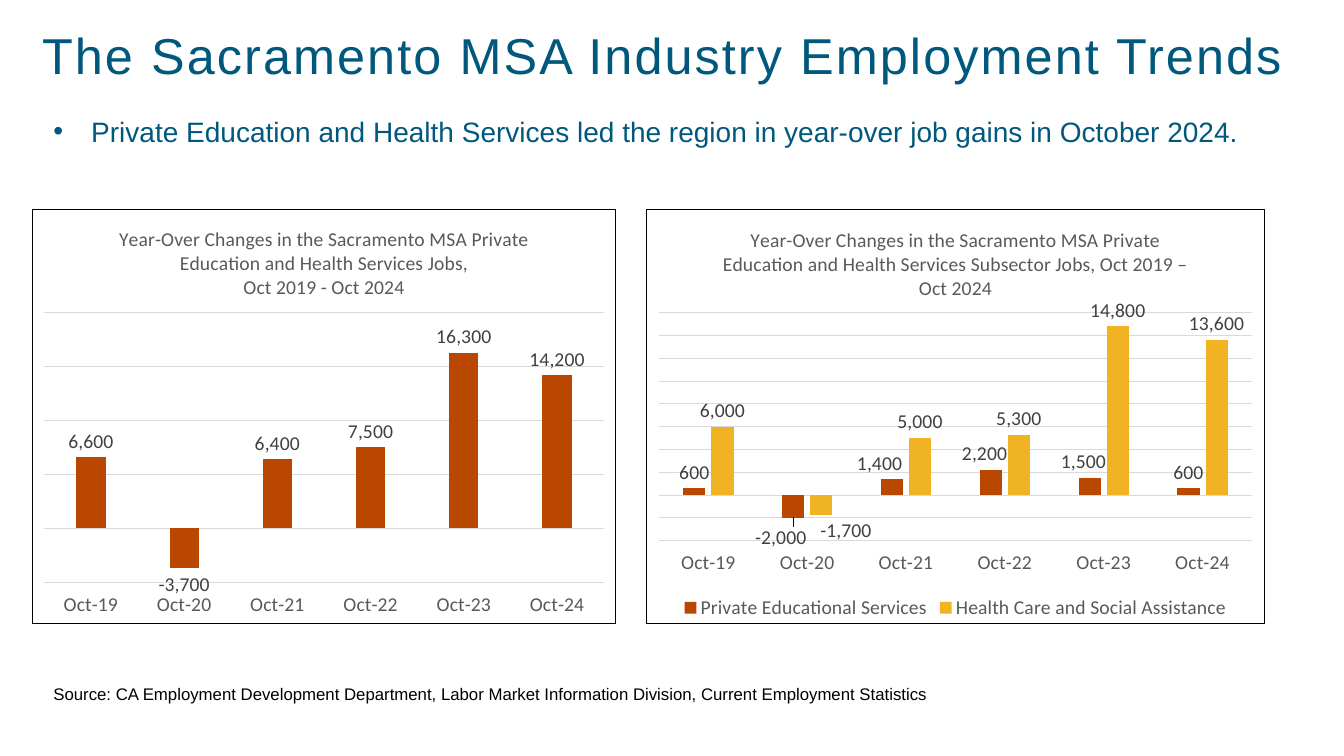
"""Build the Sacramento MSA industry employment trends slide."""
from lxml.etree import SubElement
from pptx import Presentation
from pptx.chart.data import CategoryChartData
from pptx.dml.color import RGBColor
from pptx.enum.chart import (XL_CHART_TYPE, XL_LABEL_POSITION, XL_LEGEND_POSITION,
                             XL_TICK_LABEL_POSITION, XL_TICK_MARK)
from pptx.enum.text import MSO_ANCHOR
from pptx.oxml import parse_xml
from pptx.oxml.ns import nsdecls, qn
from pptx.util import Pt

MONTHS = [f"Oct-{year}" for year in range(19, 25)]
NUMBERS = "#,##0"


def color(hex_value):
    return RGBColor.from_string(hex_value)


def style_font(font, size, ink, name):
    font.size, font.name, font.bold = Pt(size), name, False
    font.color.rgb = color(ink)


def write(paragraph, text, size=12, ink="000000", name="Arial", spacing=0, bullet=None):
    if bullet:
        properties = paragraph._p.get_or_add_pPr()
        properties.set("marL", str(Pt(27)))
        properties.set("indent", str(Pt(-27)))
        SubElement(properties, qn("a:buFont")).set("typeface", name)
        SubElement(properties, qn("a:buChar")).set("char", bullet)
    run = paragraph.add_run()
    run.text = text
    style_font(run.font, size, ink, name)
    if spacing:
        run.font._element.set("spc", str(int(spacing * 100)))


def manual_layout(x, y, w=None, h=None):
    modes = ('<c:layoutTarget val="inner"/><c:xMode val="edge"/><c:yMode val="edge"/>'
             if w else "")
    sizes = f'<c:w val="{w}"/><c:h val="{h}"/>' if w else ""
    return parse_xml(f'<c:layout {nsdecls("c")}><c:manualLayout>{modes}<c:x val="{x}"/>'
                     f'<c:y val="{y}"/>{sizes}</c:manualLayout></c:layout>')


class TrendSlide:
    """Holds the slide and its style, with a method for each kind of element."""

    heading_ink, label_ink, axis_ink, grid_ink = "00587C", "404040", "595959", "D9D9D9"
    chart_font, chart_size = "Calibri", 14

    def __init__(self, deck):
        self.slide = deck.slides.add_slide(deck.slide_layouts[6])

    def text(self, box, text, anchor=MSO_ANCHOR.TOP, **form):
        frame = self.slide.shapes.add_textbox(*map(Pt, box)).text_frame
        frame.word_wrap = True
        frame.vertical_anchor = anchor
        write(frame.paragraphs[0], text, **form)

    def chart(self, box, title, sectors, scale, plot_height, shifts=None, legend=False):
        data = CategoryChartData(number_format=NUMBERS)
        data.categories = MONTHS
        for name, values, _ in sectors:
            data.add_series(name, values)
        chart = self.slide.shapes.add_chart(
            XL_CHART_TYPE.COLUMN_CLUSTERED, *map(Pt, box), data).chart
        style_font(chart.font, 10, "000000", self.chart_font)
        self.title(chart, title)
        self.axes(chart, scale)
        self.frame(chart, plot_height)
        plot = chart.plots[0]
        plot.gap_width, plot.overlap, plot.vary_by_categories = 219, -27, False
        for series, (name, _, fill) in zip(plot.series, sectors):
            series.format.fill.solid()
            series.format.fill.fore_color.rgb = color(fill)
            series.invert_if_negative = False
            self.labels(series, (shifts or {}).get(name, {}))
        chart.has_legend = legend
        if legend:
            chart.legend.position = XL_LEGEND_POSITION.BOTTOM
            chart.legend.include_in_layout = False
            style_font(chart.legend.font, self.chart_size, self.axis_ink, self.chart_font)

    def title(self, chart, lines):
        chart.has_title = True
        frame = chart.chart_title.text_frame
        for number, line in enumerate(lines):
            paragraph = frame.add_paragraph() if number else frame.paragraphs[0]
            write(paragraph, line, size=self.chart_size, ink=self.axis_ink,
                  name=self.chart_font)
        chart.chart_title.include_in_layout = False

    def axes(self, chart, scale):
        months, jobs = chart.category_axis, chart.value_axis
        months.tick_label_position = XL_TICK_LABEL_POSITION.LOW
        months.major_tick_mark = XL_TICK_MARK.NONE
        style_font(months.tick_labels.font, self.chart_size, self.axis_ink, self.chart_font)
        jobs.minimum_scale, jobs.maximum_scale, jobs.major_unit = scale
        jobs.has_major_gridlines = True
        jobs.visible = False
        for line in (months.format.line, jobs.major_gridlines.format.line):
            line.color.rgb = color(self.grid_ink)
            line.width = Pt(0.75)

    def frame(self, chart, plot_height):
        chart._chartSpace.chart.addnext(parse_xml(
            f'<c:spPr {nsdecls("c", "a")}><a:solidFill><a:srgbClr val="FFFFFF"/></a:solidFill>'
            f'<a:ln w="{Pt(0.75)}"><a:solidFill><a:srgbClr val="000000"/></a:solidFill></a:ln>'
            '</c:spPr>'))
        area = chart._chartSpace.chart.plotArea
        for layout in area.findall(qn("c:layout")):
            area.remove(layout)
        area.insert(0, manual_layout(0.02, 0.25, 0.96, plot_height))

    def labels(self, series, shifts):
        labels = series.data_labels
        labels.show_value = True
        labels.number_format, labels.number_format_is_linked = NUMBERS, False
        labels.position = XL_LABEL_POSITION.OUTSIDE_END
        style_font(labels.font, self.chart_size, self.label_ink, self.chart_font)
        for index, shift in shifts.items():
            label = series.points[index].data_label
            style_font(label.font, self.chart_size, self.label_ink, self.chart_font)
            label.position = XL_LABEL_POSITION.OUTSIDE_END
            entry = series._element.xpath(f"c:dLbls/c:dLbl[c:idx/@val={index}]")[0]
            entry.find(qn("c:idx")).addnext(manual_layout(*shift))


def main():
    deck = Presentation()
    deck.slide_width, deck.slide_height = Pt(960), Pt(540)
    trends = TrendSlide(deck)
    trends.text((23, 6, 914, 66), "The Sacramento MSA Industry Employment Trends",
                anchor=MSO_ANCHOR.MIDDLE, size=36, ink=trends.heading_ink, spacing=1.5)
    trends.text((31, 78, 898, 66),
                "Private Education and Health Services led the region in year-over job gains "
                "in October 2024.", size=20, ink=trends.heading_ink, bullet="•")
    trends.chart(
        (23, 149, 417, 297),
        ["Year-Over Changes in the Sacramento MSA Private Education and Health Services Jobs,",
         "Oct 2019 - Oct 2024"],
        [("Series 1", (6600, -3700, 6400, 7500, 16300, 14200), "B94700")],
        scale=(-5000, 20000, 5000), plot_height=0.65)
    education, health = "Private Educational Services", "Health Care and Social Assistance"
    trends.chart(
        (461.5, 149, 442, 297),
        ["Year-Over Changes in the Sacramento MSA Private Education and Health Services "
         "Subsector Jobs, Oct 2019 – Oct 2024"],
        [(education, (600, -2000, 1400, 2200, 1500, 600), "B94700"),
         (health, (6000, -1700, 5000, 5300, 14800, 13600), "F0B323")],
        scale=(-4000, 16000, 2000), plot_height=0.55, legend=True,
        shifts={education: {1: (-0.02, 0.01), 2: (-0.02, 0), 3: (-0.01, 0), 4: (-0.01, 0)},
                health: {1: (0.04, 0)}})
    trends.text((31, 484.5, 646, 22),
                "Source: CA Employment Development Department, Labor Market Information "
                "Division, Current Employment Statistics")
    deck.save("out.pptx")


if __name__ == "__main__":
    main()
